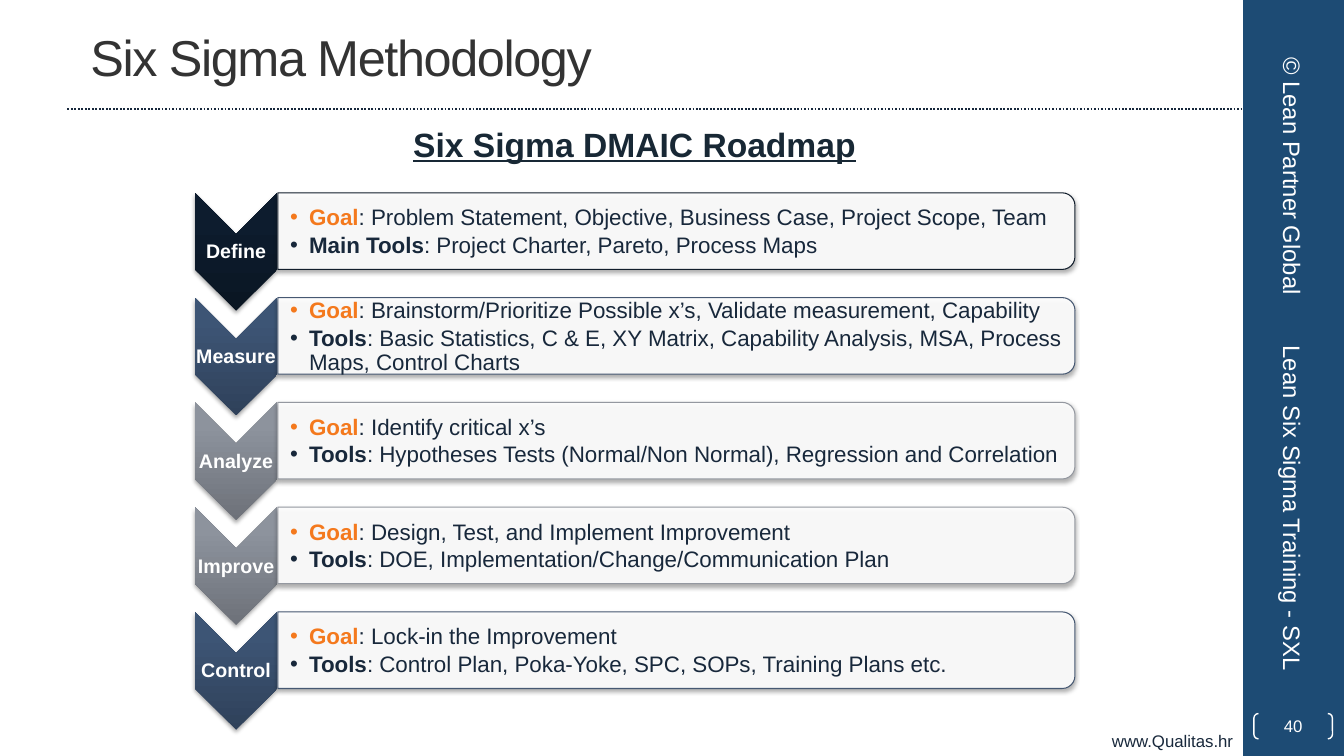
from lxml.etree import SubElement
from pptx import Presentation
from pptx.dml.color import RGBColor
from pptx.enum.dml import MSO_LINE
from pptx.enum.shapes import MSO_CONNECTOR, MSO_SHAPE
from pptx.enum.text import MSO_ANCHOR, PP_ALIGN
from pptx.oxml.ns import qn
from pptx.util import Cm, Pt

WHITE, INK, ORANGE = "FFFFFF", "18283B", "F4791D"
BLACK = ("0A1623", "0D1C2E", "0D1C2F", "121E2C")
BLUE = ("2F415A", "3D5575", "3D5577", "465872")
GREY = ("6D7179", "8D939D", "8E949E", "9498A0")

# Phase, colours (three gradient stops, outline), goal, tools heading, tools
PHASES = [
    ("Define", BLACK,
     "Problem Statement, Objective, Business Case, Project Scope, Team",
     "Main Tools", "Project Charter, Pareto, Process Maps"),
    ("Measure", BLUE,
     "Brainstorm/Prioritize Possible x’s, Validate measurement, Capability",
     "Tools", "Basic Statistics, C & E, XY Matrix, Capability Analysis, MSA, "
     "Process Maps, Control Charts"),
    ("Analyze", GREY, "Identify critical x’s",
     "Tools", "Hypotheses Tests (Normal/Non Normal), Regression and Correlation"),
    ("Improve", GREY, "Design, Test, and Implement Improvement",
     "Tools", "DOE, Implementation/Change/Communication Plan"),
    ("Control", BLUE, "Lock-in the Improvement",
     "Tools", "Control Plan, Poka-Yoke, SPC, SOPs, Training Plans etc."),
]
TOP, STEP = 4.86, 2.64
SIDE = [
    ("© Lean Partner Global", 0.41, 8.05, PP_ALIGN.CENTER),
    ("Lean Six Sigma Training - SXL", 8.46, 9.32, PP_ALIGN.LEFT),
]

deck = Presentation()
deck.slide_width, deck.slide_height = Cm(33.87), Cm(19.05)
slide = deck.slides.add_slide(deck.slide_layouts[6])
shapes = slide.shapes


def hue(code):
    return RGBColor.from_string(code)


def place(x, y, w, h):
    return Cm(x), Cm(y), Cm(w), Cm(h)


def turn(x, y, w, h):
    """Frame that covers the given area once it is rotated by 90 degrees."""
    return place(x + (w - h) / 2, y + (h - w) / 2, h, w)


def style(par, size, color=INK, align=PP_ALIGN.LEFT, bold=False):
    par.alignment = align
    font = par.font
    font.name, font.size, font.bold = "Arial", Pt(size), bold
    font.color.rgb = hue(color)
    return par


def inset(frame, left, rest):
    frame.margin_left = Cm(left)
    frame.margin_top = frame.margin_right = frame.margin_bottom = Cm(rest)


def write(area, text, size, color=INK, align=PP_ALIGN.LEFT, bold=False,
          anchor=MSO_ANCHOR.MIDDLE):
    box = shapes.add_textbox(*area)
    frame = box.text_frame
    frame.word_wrap, frame.vertical_anchor = True, anchor
    frame.text = text
    style(frame.paragraphs[0], size, color, align, bold)
    return box


def draw(kind, area):
    shape = shapes.add_shape(kind, *area)
    shape.shadow.inherit = False
    shape.line.fill.background()
    return shape


def shade(shape):
    """Soft shadow straight below the shape."""
    effects = shape._element.spPr.find(qn("a:effectLst"))
    outer = SubElement(effects, qn("a:outerShdw"), blurRad="40000",
                       dist="23000", dir="5400000", rotWithShape="0")
    black = SubElement(outer, qn("a:srgbClr"), val="000000")
    SubElement(black, qn("a:alpha"), val="35000")


def blend(shape, stops):
    """Upward gradient that does not turn with the shape."""
    shape.fill.gradient()
    grad = shape._element.spPr.find(qn("a:gradFill"))
    for child in list(grad):
        grad.remove(child)
    grad.set("rotWithShape", "0")
    items = SubElement(grad, qn("a:gsLst"))
    for pos, code in zip((0, 80000, 100000), stops):
        stop = SubElement(items, qn("a:gs"), pos=str(pos))
        SubElement(stop, qn("a:srgbClr"), val=code)
    SubElement(grad, qn("a:lin"), ang="16200000", scaled="0")


def bullet(par, head, tail, color):
    props = par._p.get_or_add_pPr()
    props.set("marL", str(Cm(0.48)))
    props.set("indent", str(-Cm(0.48)))
    tint = SubElement(props, qn("a:buClr"))
    SubElement(tint, qn("a:srgbClr"), val=color)
    SubElement(props, qn("a:buFont"), typeface="Arial")
    SubElement(props, qn("a:buChar"), char="•")
    par.line_spacing, par.space_after = 0.9, Pt(2.4)
    style(par, 16)
    lead = par.add_run()
    lead.text = head
    lead.font.bold, lead.font.color.rgb = True, hue(color)
    par.add_run().text = ": " + tail


def phase(top, name, colors, goal, head, tools):
    arrow = draw(MSO_SHAPE.CHEVRON, turn(4.91, top, 2.08, 2.97))
    arrow.rotation = 90
    blend(arrow, colors[:3])
    shade(arrow)
    label = write(place(4.91, top + 1.06, 2.08, 0.89), name, 14, WHITE,
                  PP_ALIGN.CENTER, True)
    inset(label.text_frame, 0.03, 0.03)
    label.text_frame.paragraphs[0].line_spacing = 0.9

    panel = draw(MSO_SHAPE.ROUND_2_SAME_RECTANGLE, turn(7, top, 20.09, 1.93))
    panel.rotation = 90
    panel.fill.solid()
    panel.fill.fore_color.rgb = hue(WHITE)
    tint = panel._element.spPr.find(qn("a:solidFill"))[0]
    SubElement(tint, qn("a:alpha"), val="90000")
    panel.line.color.rgb, panel.line.width = hue(colors[3]), Pt(0.75)
    shade(panel)

    frame = shapes.add_textbox(*place(7, top + 0.12, 20, 1.75)).text_frame
    frame.word_wrap, frame.vertical_anchor = True, MSO_ANCHOR.MIDDLE
    inset(frame, 0.31, 0.03)
    bullet(frame.paragraphs[0], "Goal", goal, ORANGE)
    bullet(frame.add_paragraph(), head, tools, INK)


band = draw(MSO_SHAPE.RECTANGLE, place(31.33, 0, 2.54, 19.05))
band.fill.solid()
band.fill.fore_color.rgb = hue("1D4B74")
write(place(0, 18.29, 31.33, 0.76), "www.Qualitas.hr", 12,
      align=PP_ALIGN.RIGHT, anchor=MSO_ANCHOR.TOP)

rule = shapes.add_connector(MSO_CONNECTOR.STRAIGHT, Cm(1.7), Cm(2.74),
                            Cm(31.33), Cm(2.74))
rule.line.color.rgb, rule.line.width = hue("17273B"), Pt(1.25)
rule.line.dash_style = MSO_LINE.ROUND_DOT
SubElement(rule._element.spPr, qn("a:effectLst"))

title = write(place(2.03, 0.08, 27.5, 2.67), "Six Sigma Methodology", 36, "333333")
title.text_frame.paragraphs[0].runs[0]._r.get_or_add_rPr().set("spc", "-100")

page = draw(MSO_SHAPE.DOUBLE_BRACKET, place(31.6, 17.98, 1.98, 0.64))
page.adjustments[0] = 0.18
page.fill.background()
page.line.color.rgb, page.line.width = hue(WHITE), Pt(1)
page.text_frame.text = "40"
page.text_frame.vertical_anchor = MSO_ANCHOR.MIDDLE
inset(page.text_frame, 0, 0)
style(page.text_frame.paragraphs[0], 12, WHITE, PP_ALIGN.CENTER)

for text, top, length, align in SIDE:
    write(turn(31.9, top, 1.35, length), text, 17, WHITE, align).rotation = 90

for row, item in enumerate(PHASES):
    phase(TOP + row * STEP, *item)

roadmap = write(place(4.24, 3, 23.5, 1.27), "Six Sigma DMAIC Roadmap", 24,
                "182835", PP_ALIGN.CENTER, True, MSO_ANCHOR.TOP)
roadmap.text_frame.paragraphs[0].font.underline = True

deck.save("out.pptx")
